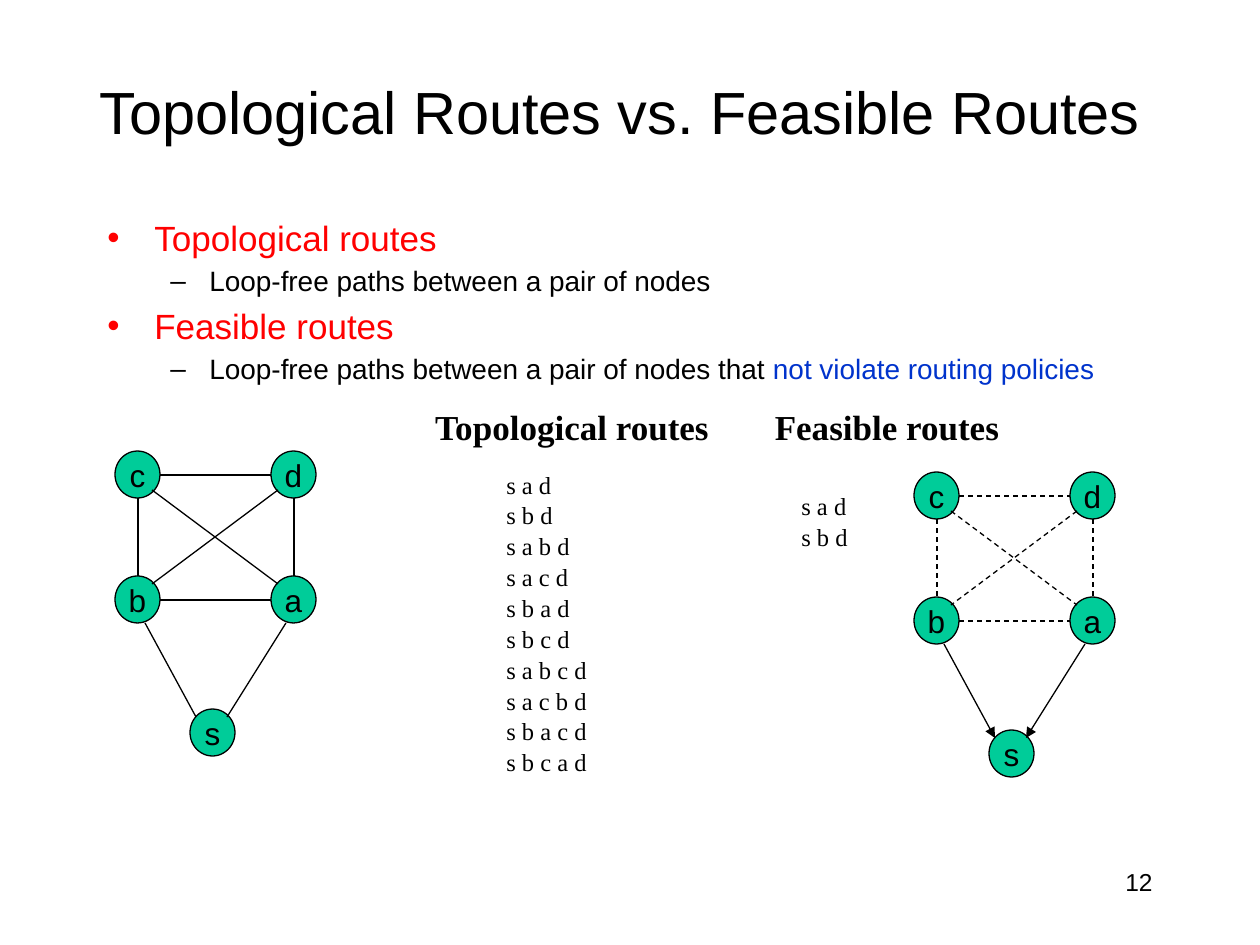
"""Build the slide on topological and feasible routes."""
from lxml import etree
from pptx import Presentation
from pptx import util as u
from pptx.dml.color import RGBColor
from pptx.enum import dml, shapes, text
from pptx.oxml import ns

BLACK = RGBColor(0x00, 0x00, 0x00)
RED = RGBColor(0xFF, 0x00, 0x00)
BLUE = RGBColor(0x00, 0x33, 0xCC)
GREEN = RGBColor(0x00, 0xCC, 0x99)
PX = u.Inches(1) / 126


def px(*lengths):
    return [u.Emu(round(length * PX)) for length in lengths]


def style(para, size, color=BLACK, font="Arial", bold=False):
    for span in para.runs:
        span.font.name = font
        span.font.size = u.Pt(size)
        span.font.bold = bold
        span.font.color.rgb = color


deck = Presentation()
deck.slide_width, deck.slide_height = px(1260, 945)
page = deck.slides.add_slide(deck.slide_layouts[5])

title = page.shapes.title
title.left, title.top, title.width, title.height = px(69, 53, 1102, 116)
title.text_frame.text = "Topological Routes vs. Feasible Routes"
title.text_frame.auto_size = text.MSO_AUTO_SIZE.NONE
title.text_frame.vertical_anchor = text.MSO_ANCHOR.MIDDLE
title.text_frame.paragraphs[0].alignment = text.PP_ALIGN.CENTER
style(title.text_frame.paragraphs[0], 34)

bullets = [
    (0, ["Topological routes"]),
    (1, ["Loop-free paths between a pair of nodes"]),
    (0, ["Feasible routes"]),
    (1, ["Loop-free paths between a pair of nodes that ", "not violate routing policies"]),
]
levels = [("•", 20, RED, 47, -47), ("–", 16, BLACK, 102, -39)]
body = page.shapes.add_textbox(*px(95, 210, 1071, 630)).text_frame
body.word_wrap = True
for index, (level, parts) in enumerate(bullets):
    mark, size, color, margin, indent = levels[level]
    para = body.paragraphs[0] if index == 0 else body.add_paragraph()
    para.level = level
    para.space_before = u.Pt(size * 0.2)
    for part in parts:
        para.add_run().text = part
    style(para, size, color)
    if len(parts) > 1:
        para.runs[1].font.color.rgb = BLUE
    props = para._p.get_or_add_pPr()
    for name, length in zip(("marL", "indent"), px(margin, indent)):
        props.set(name, str(length))
    etree.SubElement(props, ns.qn("a:buFont")).set("typeface", "Arial")
    etree.SubElement(props, ns.qn("a:buChar")).set("char", mark)

topological = ["s a d", "s b d", "s a b d", "s a c d", "s b a d", "s b c d",
               "s a b c d", "s a c b d", "s b a c d", "s b c a d"]
feasible = topological[:2]
SERIF = "Times New Roman"
labels = [
    (421, 399, 302, 84, ["Topological routes"], 20, SERIF, True, text.PP_ALIGN.CENTER, 1),
    (494, 462, 126, 306, topological, 14, SERIF, False, text.PP_ALIGN.LEFT, 1.05),
    (736, 399, 302, 84, ["Feasible routes"], 20, SERIF, True, text.PP_ALIGN.CENTER, 1),
    (789, 483, 126, 72, feasible, 14, SERIF, False, text.PP_ALIGN.LEFT, 1.05),
    (903, 861, 262, 63, ["12"], 14, "Arial", False, text.PP_ALIGN.RIGHT, 1),
]
for left, top, width, height, lines, size, font, bold, align, spacing in labels:
    frame = page.shapes.add_textbox(*px(left, top, width, height)).text_frame
    frame.word_wrap = True
    frame.text = "\n".join(lines)
    for para in frame.paragraphs:
        para.alignment = align
        para.line_spacing = spacing
        style(para, size, BLACK, font, bold)

nodes = {"c": (115, 451), "d": (271, 451), "b": (115, 576), "a": (271, 576), "s": (190, 709)}
peer_links = [
    (160, 475, 271, 475), (138, 498, 138, 576), (160, 600, 271, 600),
    (294, 498, 294, 576), (152, 490, 278, 584), (278, 490, 152, 584),
]
source_links = [(145, 623, 196, 717), (286, 623, 227, 717)]
for dx, dy, directed in [(0, 0, False), (799, 21, True)]:
    for name, (left, top) in nodes.items():
        node = page.shapes.add_shape(
            shapes.MSO_SHAPE.OVAL, *px(left + dx, top + dy, 45, 47))
        node.shadow.inherit = False
        node.fill.solid()
        node.fill.fore_color.rgb = GREEN
        node.line.color.rgb = BLACK
        node.line.width = u.Pt(0.75)
        frame = node.text_frame
        frame.word_wrap = False
        frame.vertical_anchor = text.MSO_ANCHOR.MIDDLE
        frame.text = name
        frame.paragraphs[0].alignment = text.PP_ALIGN.CENTER
        style(frame.paragraphs[0], 18)
    for link in peer_links + source_links:
        x1, y1, x2, y2 = link
        edge = page.shapes.add_connector(
            shapes.MSO_CONNECTOR.STRAIGHT, *px(x1 + dx, y1 + dy, x2 + dx, y2 + dy))
        edge.line.color.rgb = BLACK
        edge.line.width = u.Pt(0.75)
        if directed and link in peer_links:
            edge.line.dash_style = dml.MSO_LINE.DASH
        elif directed:
            etree.SubElement(edge.line._get_or_add_ln(), ns.qn("a:tailEnd")).set("type", "triangle")
        etree.SubElement(edge._element.spPr, ns.qn("a:effectLst"))

deck.save("out.pptx")
